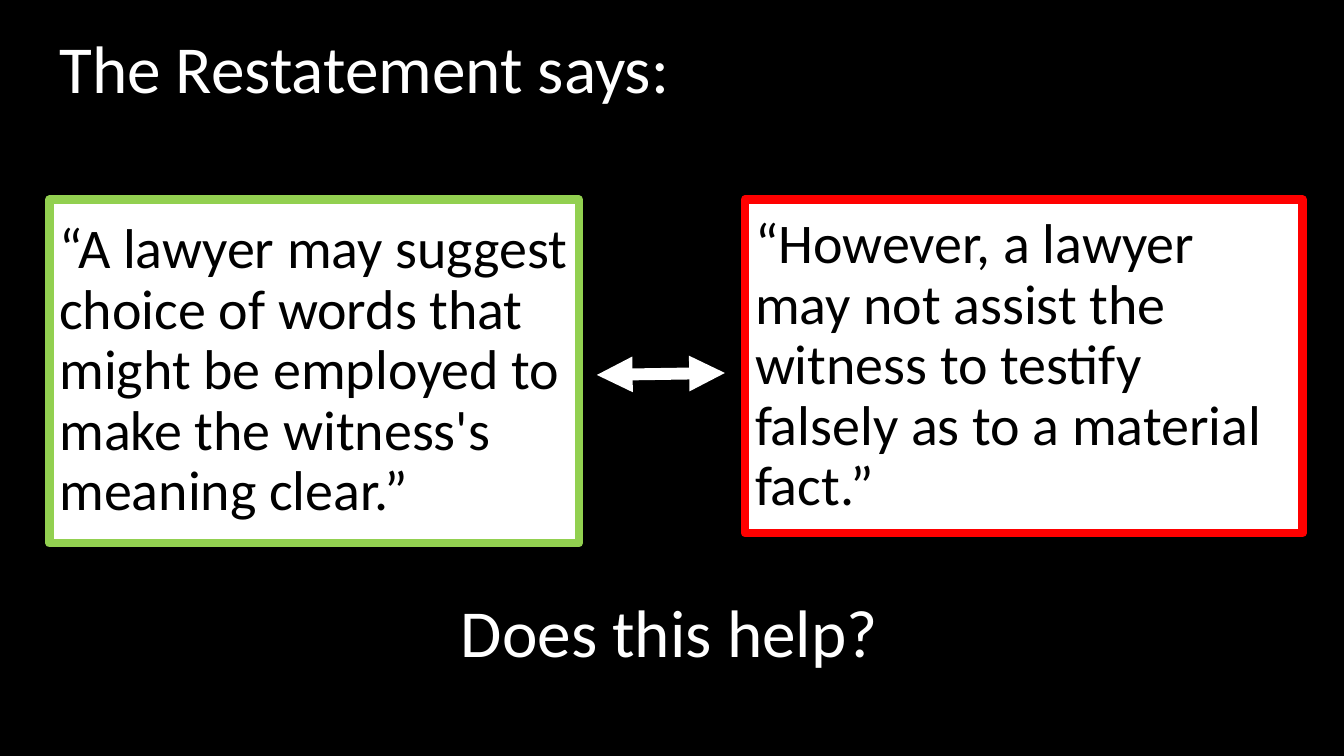
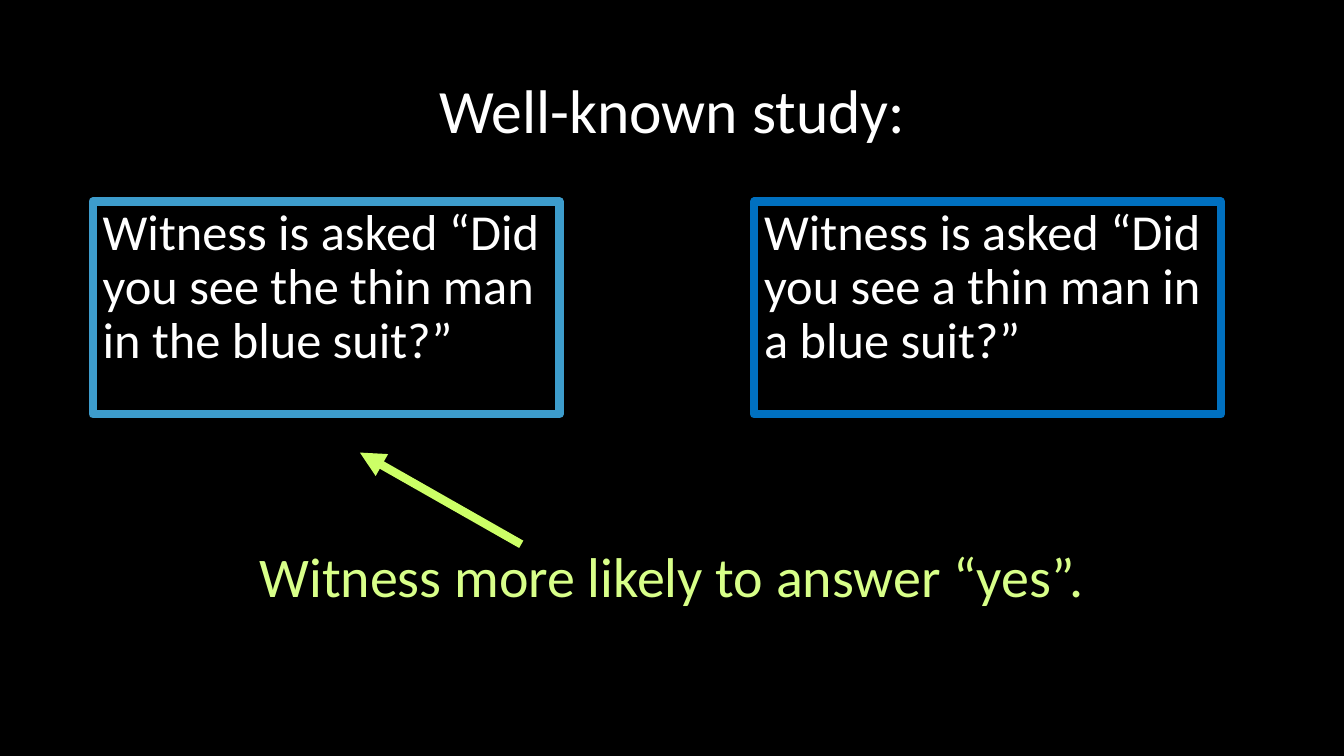
from dataclasses import dataclass

from lxml import etree
from pptx import Presentation
from pptx.dml.color import RGBColor
from pptx.enum.shapes import MSO_CONNECTOR, MSO_SHAPE
from pptx.enum.text import MSO_ANCHOR, MSO_AUTO_SIZE, PP_ALIGN
from pptx.oxml.ns import qn
from pptx.presentation import Presentation as Deck
from pptx.slide import Slide
from pptx.util import Emu, Pt

LEFT, CENTER = PP_ALIGN.LEFT, PP_ALIGN.CENTER
TOP, MIDDLE = MSO_ANCHOR.TOP, MSO_ANCHOR.MIDDLE
FIT_SHAPE, NO_FIT = MSO_AUTO_SIZE.SHAPE_TO_FIT_TEXT, MSO_AUTO_SIZE.NONE
RECTANGLE, STRAIGHT = MSO_SHAPE.RECTANGLE, MSO_CONNECTOR.STRAIGHT

EMU_PER_PX = 9144
PAGE_WIDTH, PAGE_HEIGHT = 1333, 750
BLANK_LAYOUT = 6
FONT = "Calibri"
BORDER_POINTS = 6
BLACK, WHITE = "000000", "FFFFFF"
GREEN, RED = "92D050", "FF0000"
SKY, BLUE = "3D9CCC", "0070C0"
LIME, PALE_LIME = "CCFF66", "D8FF89"


@dataclass(frozen=True)
class Label:
    text: str
    left: int
    top: int
    width: int
    height: int
    size: int
    color: str = WHITE
    align: PP_ALIGN = CENTER
    anchor: MSO_ANCHOR = MIDDLE
    line_spacing: float = 0.9
    space_before: int = 0
    auto_size: MSO_AUTO_SIZE = NO_FIT


@dataclass(frozen=True)
class Panel:
    label: Label
    border: str
    fill: str | None = None


@dataclass(frozen=True)
class Arrow:
    start: tuple[int, int]
    end: tuple[int, int]
    color: str
    weight: float
    ends: tuple[str, ...] = ("tailEnd",)


def px(length: int) -> Emu:
    return Emu(length * EMU_PER_PX)


def rgb(value: str) -> RGBColor:
    return RGBColor.from_string(value)


def set_values(target: object, values: dict[str, object]) -> None:
    for name, value in values.items():
        setattr(target, name, value)


def write_label(box, label: Label) -> None:
    frame = box.text_frame
    set_values(frame, {
        "word_wrap": True,
        "auto_size": label.auto_size,
        "vertical_anchor": label.anchor,
    })
    para = frame.paragraphs[0]
    set_values(para, {
        "alignment": label.align,
        "line_spacing": label.line_spacing,
        "space_before": Pt(label.space_before),
    })
    span = para.add_run()
    span.text = label.text
    set_values(span.font, {"name": FONT, "size": Pt(label.size)})
    span.font.color.rgb = rgb(label.color)


def bounds(label: Label) -> list[Emu]:
    return [px(side) for side in (label.left, label.top, label.width, label.height)]


def draw_label(page: Slide, label: Label) -> None:
    write_label(page.shapes.add_textbox(*bounds(label)), label)


def draw_panel(page: Slide, panel: Panel) -> None:
    box = page.shapes.add_shape(RECTANGLE, *bounds(panel.label))
    box.shadow.inherit = False
    if panel.fill:
        box.fill.solid()
        box.fill.fore_color.rgb = rgb(panel.fill)
    else:
        box.fill.background()
    box.line.color.rgb = rgb(panel.border)
    box.line.width = Pt(BORDER_POINTS)
    write_label(box, panel.label)


def draw_arrow(page: Slide, arrow: Arrow) -> None:
    points = [px(value) for value in (*arrow.start, *arrow.end)]
    connector = page.shapes.add_connector(STRAIGHT, *points)
    connector.line.color.rgb = rgb(arrow.color)
    connector.line.width = Pt(arrow.weight)
    outline = connector.line._get_or_add_ln()
    for end in arrow.ends:
        etree.SubElement(outline, qn(f"a:{end}"), type="triangle")
    etree.SubElement(connector._element.spPr, qn("a:effectLst"))


def add_page(deck: Deck) -> Slide:
    page = deck.slides.add_slide(deck.slide_layouts[BLANK_LAYOUT])
    fill = page.background.fill
    fill.solid()
    fill.fore_color.rgb = rgb(BLACK)
    return page


def build_restatement(deck: Deck) -> None:
    page = add_page(deck)
    quote = {"top": 198, "size": 40, "color": BLACK, "align": LEFT, "space_before": 10}
    panels = (
        Panel(Label("“A lawyer may suggest choice of words that might be employed "
                    "to make the witness's meaning clear.”",
                    left=49, width=525, height=341, **quote), GREEN, WHITE),
        Panel(Label("“However, a lawyer may not assist the witness to testify "
                    "falsely as to a material fact.”",
                    left=739, width=553, height=331, **quote), RED, WHITE),
    )
    draw_label(page, Label("The Restatement says:", 49, 26, 1150, 91, 48, align=LEFT))
    for panel in panels:
        draw_panel(page, panel)
    draw_arrow(page, Arrow((592, 372), (719, 370), WHITE, 8.5, ("headEnd", "tailEnd")))
    draw_label(page, Label("Does this help?", 89, 558, 1150, 145, 48))


def build_study(deck: Deck) -> None:
    page = add_page(deck)
    draw_label(page, Label("Well-known study:", 92, 40, 1150, 145, 44))
    questions = (
        ("Witness is asked “Did you see the thin man in the blue suit?”", 92, SKY),
        ("Witness is asked “Did you see a thin man in a blue suit?”", 748, BLUE),
    )
    for text, left, border in questions:
        label = Label(text, left, 200, 463, 211, 36, align=LEFT, anchor=TOP,
                      space_before=10)
        draw_panel(page, Panel(label, border))
    draw_label(page, Label("Witness more likely to answer “yes”.", 152, 532, 1028, 77, 40,
                           PALE_LIME, anchor=TOP, line_spacing=1.0, auto_size=FIT_SHAPE))
    draw_arrow(page, Arrow((517, 540), (357, 449), LIME, 6))


def main() -> None:
    deck = Presentation()
    set_values(deck, {"slide_width": px(PAGE_WIDTH), "slide_height": px(PAGE_HEIGHT)})
    build_restatement(deck)
    build_study(deck)
    deck.save("out.pptx")


if __name__ == "__main__":
    main()
